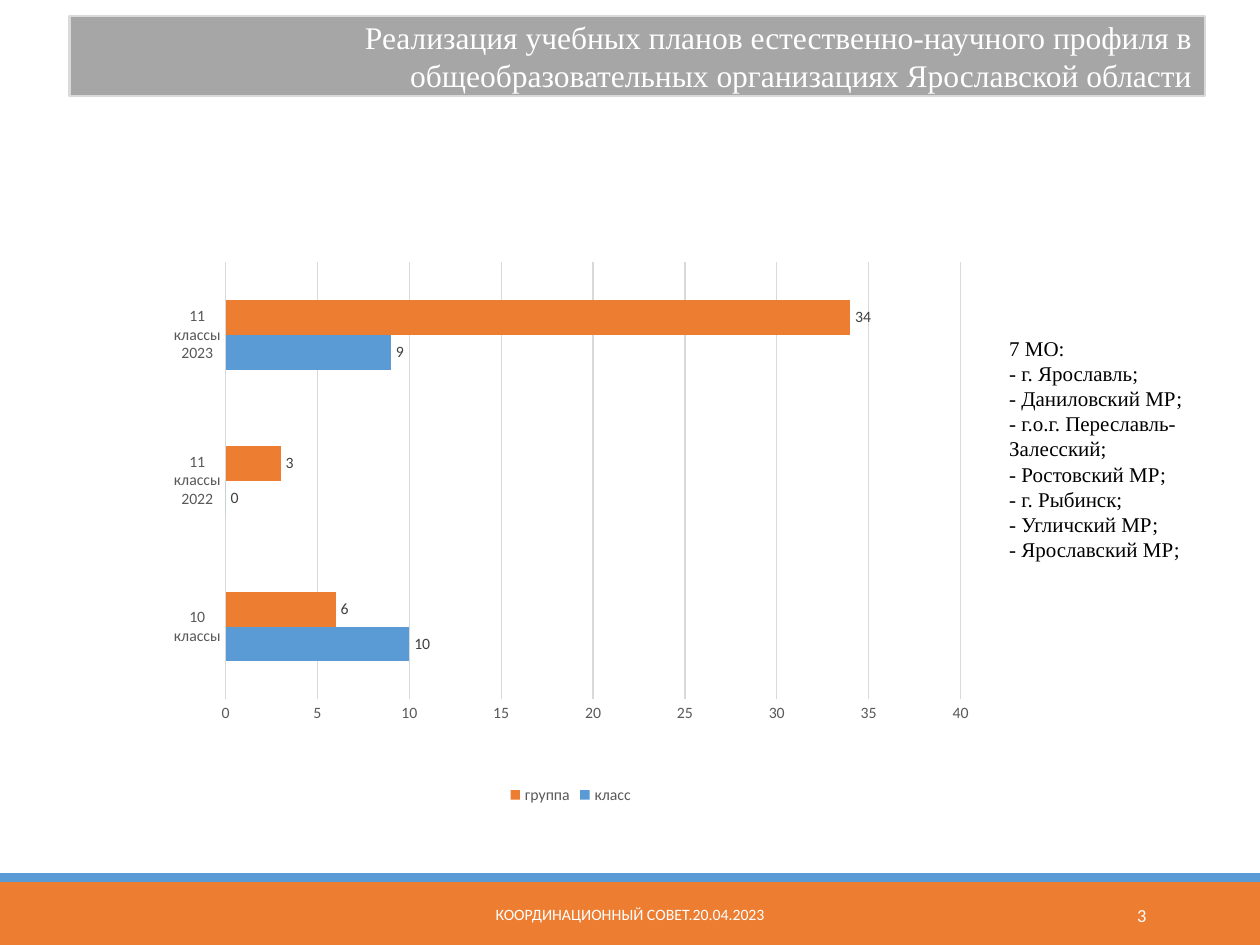
from dataclasses import dataclass

from lxml import etree
from pptx import Presentation
from pptx.chart.data import CategoryChartData
from pptx.dml.color import RGBColor
from pptx.enum import chart as kinds, shapes, text
from pptx.oxml import parse_xml
from pptx.oxml.ns import nsdecls, qn
from pptx.util import Cm, Pt

HUES = {
    "orange": "ED7D31", "blue": "5B9BD5", "gray": "A6A6A6", "grid": "D9D9D9",
    "axis": "595959", "value": "404040", "white": "FFFFFF", "black": "000000",
}
SERIF, SANS = "Times New Roman", "Calibri"
LEFT, MID, RIGHT = text.PP_ALIGN.LEFT, text.PP_ALIGN.CENTER, text.PP_ALIGN.RIGHT


@dataclass
class Box:
    left: float
    top: float
    width: float
    height: float

    def spans(self) -> list:
        return [Cm(n) for n in (self.left, self.top, self.width, self.height)]


@dataclass
class Style:
    size: float
    face: str
    hue: str
    align: int = LEFT


@dataclass
class Band:
    box: Box
    hue: str


@dataclass
class Note:
    box: Box
    words: str
    style: Style


@dataclass
class Group:
    name: str
    counts: tuple
    hue: str


BANDS = [
    Band(Box(0, 17.78, 25.4, 1.27), "orange"),
    Band(Box(0, 17.6, 25.4, 0.18), "blue"),
]
NOTES = [
    Note(Box(7.67, 17.93, 10.06, 1.02), "КООРДИНАЦИОННЫЙ СОВЕТ.20.04.2023",
         Style(9, SANS, "white", MID)),
    Note(Box(20.62, 17.93, 2.74, 1.02), "3", Style(10.5, SANS, "white", RIGHT)),
]
HEAD = Note(
    Box(1.4, 0.33, 22.89, 1.6),
    "Реализация учебных планов естественно-научного профиля в "
    "общеобразовательных организациях Ярославской области",
    Style(18, SERIF, "white", RIGHT),
)
TOWNS = Note(
    Box(20.09, 6.63, 4.8, 5.38),
    "\n".join([
        "7 МО:", "- г. Ярославль;", "- Даниловский МР;",
        "- г.о.г. Переславль-Залесский;", "- Ростовский МР;", "- г. Рыбинск;",
        "- Угличский МР;", "- Ярославский МР;",
    ]),
    Style(12, SERIF, "black"),
)
YEARS = ["10 классы", "11 классы 2022", "11 классы 2023"]
GROUPS = [
    Group("класс", (10, 0, 9), "blue"),
    Group("группа", (6, 3, 34), "orange"),
]
PLOT = {"x": 0.076, "y": 0.08, "w": 0.903, "h": 0.736}


def tint(name: str) -> RGBColor:
    return RGBColor.from_string(HUES[name])


def paint(fill, hue: str) -> None:
    fill.solid()
    fill.fore_color.rgb = tint(hue)


def dress(font, style: Style) -> None:
    font.size, font.name = Pt(style.size), style.face
    font.color.rgb = tint(style.hue)


def place(shape, box: Box) -> None:
    shape.left, shape.top, shape.width, shape.height = box.spans()


def write(shape, note: Note, anchor=text.MSO_ANCHOR.MIDDLE) -> None:
    frame = shape.text_frame
    frame.text = note.words
    frame.word_wrap = True
    frame.auto_size = text.MSO_AUTO_SIZE.NONE
    frame.vertical_anchor = anchor
    for para in frame.paragraphs:
        para.alignment = note.style.align
        para.space_before = Pt(0)
        for run in para.runs:
            dress(run.font, note.style)


def draw_band(slide, band: Band) -> None:
    shape = slide.shapes.add_shape(shapes.MSO_SHAPE.RECTANGLE, *band.box.spans())
    shape.shadow.inherit = False
    paint(shape.fill, band.hue)
    shape.line.fill.background()


def draw_head(slide) -> None:
    head = slide.shapes.title
    place(head, HEAD.box)
    paint(head.fill, "gray")
    paint(head.line.fill, "grid")
    head.line.width = Pt(1.25)
    write(head, HEAD)


def draw_towns(slide) -> None:
    body = slide.placeholders[1]
    place(body, TOWNS.box)
    write(body, TOWNS, text.MSO_ANCHOR.TOP)
    for para in body.text_frame.paragraphs:
        props = para._p.get_or_add_pPr()
        props.set("marL", "0")
        props.set("indent", "0")
        etree.SubElement(props, qn("a:buNone"))


def fix_plot(chart) -> None:
    """Pin the inner plot area to set shares of the chart."""
    area = chart._chartSpace.chart.plotArea
    for old in area.findall(qn("c:layout")):
        area.remove(old)
    modes = "".join(f'<c:{k}Mode val="edge"/>' for k in "xy")
    sides = "".join(f'<c:{k} val="{v}"/>' for k, v in PLOT.items())
    area.insert(0, parse_xml(
        f'<c:layout {nsdecls("c")}><c:manualLayout><c:layoutTarget val="inner"/>'
        f"{modes}{sides}</c:manualLayout></c:layout>"))


def draw_chart(slide) -> None:
    data = CategoryChartData()
    data.categories = YEARS
    for group in GROUPS:
        data.add_series(group.name, group.counts)
    chart = slide.shapes.add_chart(
        kinds.XL_CHART_TYPE.BAR_CLUSTERED, *Box(3.3, 4.32, 16.41, 11.99).spans(), data
    ).chart
    chart.has_title = False
    dress(chart.font, Style(10, SANS, "black"))
    small = Style(9, SANS, "axis")

    years, scale = chart.category_axis, chart.value_axis
    for axis in (years, scale):
        axis.major_tick_mark = axis.minor_tick_mark = kinds.XL_TICK_MARK.NONE
        dress(axis.tick_labels.font, small)
    years.has_major_gridlines = False
    scale.has_major_gridlines = True
    scale.minimum_scale, scale.maximum_scale, scale.major_unit = 0, 40, 5
    scale.format.line.fill.background()
    for line in (years.format.line, scale.major_gridlines.format.line):
        paint(line.fill, "grid")
        line.width = Pt(0.75)

    chart.has_legend = True
    chart.legend.position = kinds.XL_LEGEND_POSITION.BOTTOM
    chart.legend.include_in_layout = False
    dress(chart.legend.font, small)

    plot = chart.plots[0]
    plot.gap_width, plot.vary_by_categories = 219, False
    for bars, group in zip(plot.series, GROUPS):
        paint(bars.format.fill, group.hue)
        bars.invert_if_negative = False
        labels = bars.data_labels
        labels.show_value = True
        labels.position = kinds.XL_LABEL_POSITION.OUTSIDE_END
        dress(labels.font, Style(9, SANS, "value"))
    fix_plot(chart)


def main() -> None:
    deck = Presentation()
    deck.slide_width, deck.slide_height = Cm(25.4), Cm(19.05)
    slide = deck.slides.add_slide(deck.slide_layouts[1])
    for band in BANDS:
        draw_band(slide, band)
    draw_chart(slide)
    draw_towns(slide)
    draw_head(slide)
    for note in NOTES:
        write(slide.shapes.add_textbox(*note.box.spans()), note)
    deck.save("out.pptx")


if __name__ == "__main__":
    main()
